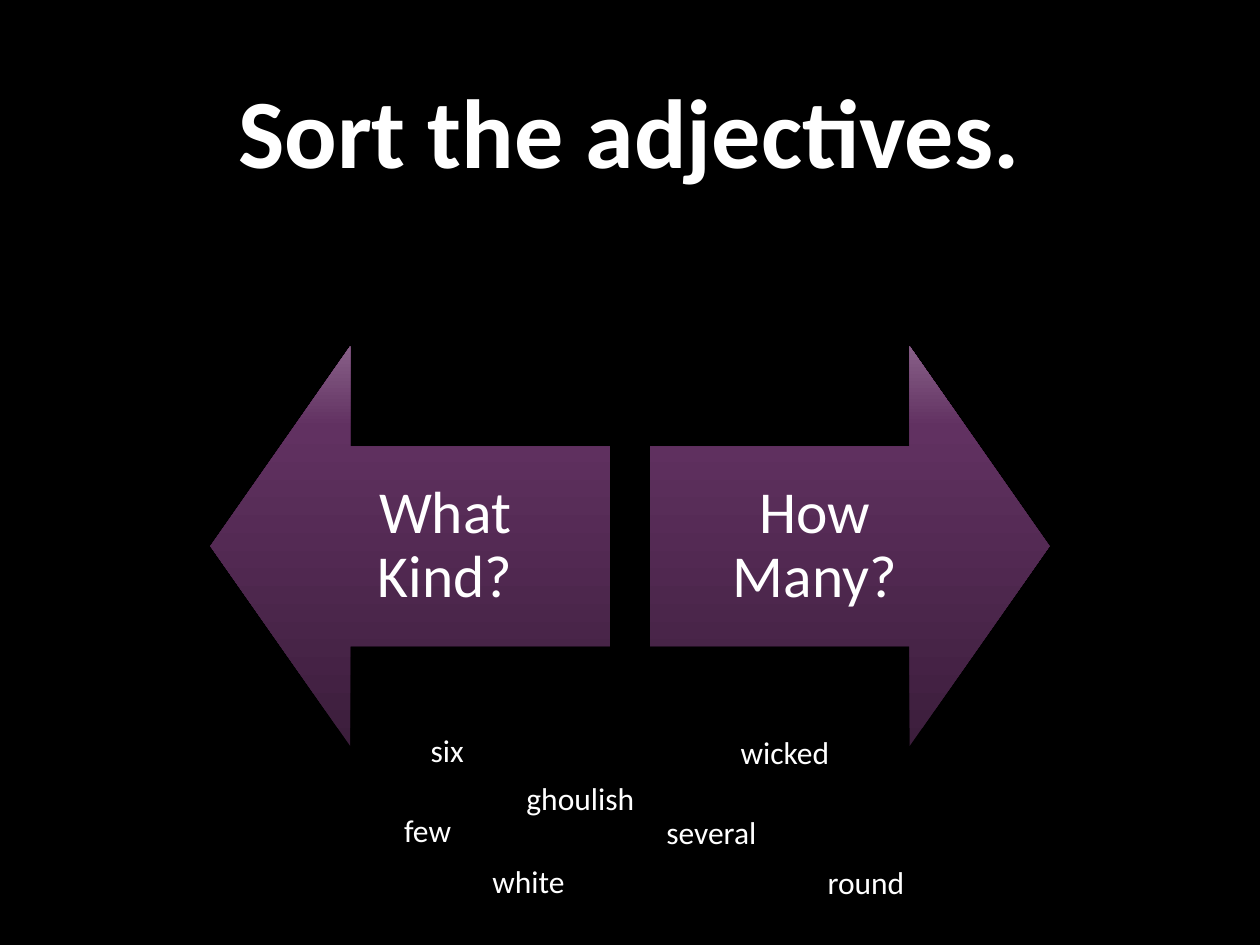
from dataclasses import dataclass

from pptx import Presentation
from pptx import util as u
from pptx.dml.color import RGBColor
from pptx.enum import shapes, text
from pptx.oxml import parse_xml
from pptx.oxml.ns import nsdecls


@dataclass(frozen=True)
class Theme:
    font: str = "Calibri"
    background: str = "000000"
    ink: str = "FFFFFF"
    # Arrow gradient from bottom to top: (percent, colour)
    gradient: tuple = ((0, "3C1E3C"), (80, "613161"), (100, "886088"))
    title_size: int = 56
    arrow_size: int = 34
    word_size: int = 18


THEME = Theme()
ARROW_SIZE = 3.17

ARROWS = [
    ("What Kind?", shapes.MSO_SHAPE.LEFT_ARROW, 1.67),
    ("How Many?", shapes.MSO_SHAPE.RIGHT_ARROW, 5.16),
]

# Word, left, top, width
WORDS = [
    ("white", 3.81, 6.79, 0.91),
    ("few", 3.11, 6.39, 0.7),
    ("ghoulish", 4.08, 6.13, 1.28),
    ("several", 5.19, 6.4, 1.06),
    ("round", 6.47, 6.8, 0.99),
    ("wicked", 5.78, 5.77, 1.38),
    ("six", 3.32, 5.75, 0.7),
]


def write(tf, content, size, align, bold=False):
    tf.word_wrap = True
    p = tf.paragraphs[0]
    p.text = content
    p.alignment = align
    p.font.name = THEME.font
    p.font.size = u.Pt(size)
    p.font.bold = bold
    p.font.color.rgb = RGBColor.from_string(THEME.ink)
    return p


def add_title(slide, content):
    box = slide.shapes.add_textbox(
        u.Inches(0.85), u.Inches(0.12), u.Inches(8.29), u.Inches(1.81))
    tf = box.text_frame
    tf.vertical_anchor = text.MSO_ANCHOR.MIDDLE
    write(tf, content, THEME.title_size, text.PP_ALIGN.CENTER, bold=True)


def fill_gradient(sp):
    stops = "".join(
        f'<a:gs pos="{percent * 1000}"><a:srgbClr val="{colour}"/></a:gs>'
        for percent, colour in THEME.gradient)
    sp.fill.background()
    no_fill = sp.element.spPr.find(
        "{http://schemas.openxmlformats.org/drawingml/2006/main}noFill")
    no_fill.getparent().replace(no_fill, parse_xml(
        f'<a:gradFill {nsdecls("a")} rotWithShape="1"><a:gsLst>{stops}</a:gsLst>'
        '<a:lin ang="16200000" scaled="0"/></a:gradFill>'))


def add_arrow(slide, label, kind, left):
    sp = slide.shapes.add_shape(
        kind, u.Inches(left), u.Inches(2.75),
        u.Inches(ARROW_SIZE), u.Inches(ARROW_SIZE))
    sp.adjustments[0] = 0.5
    sp.adjustments[1] = 0.35
    sp.shadow.inherit = False
    fill_gradient(sp)
    sp.line.fill.background()
    tf = sp.text_frame
    tf.margin_left = tf.margin_right = u.Inches(0.26)
    tf.margin_top = tf.margin_bottom = u.Inches(0.26)
    tf.vertical_anchor = text.MSO_ANCHOR.MIDDLE
    p = write(tf, label, THEME.arrow_size, text.PP_ALIGN.CENTER)
    p.line_spacing = 0.9


def add_word(slide, word, left, top, width):
    box = slide.shapes.add_textbox(
        u.Inches(left), u.Inches(top), u.Inches(width), u.Inches(0.4))
    write(box.text_frame, word, THEME.word_size, text.PP_ALIGN.LEFT)
    box.text_frame.auto_size = text.MSO_AUTO_SIZE.SHAPE_TO_FIT_TEXT


def main():
    prs = Presentation()
    prs.slide_width, prs.slide_height = u.Inches(10), u.Inches(7.5)
    slide = prs.slides.add_slide(prs.slide_layouts[6])
    slide.background.fill.solid()
    slide.background.fill.fore_color.rgb = RGBColor.from_string(THEME.background)

    # Heading
    add_title(slide, "Sort the adjectives.")

    # The two categories
    for arrow in ARROWS:
        add_arrow(slide, *arrow)

    # Words to sort
    for word in WORDS:
        add_word(slide, *word)

    prs.save("out.pptx")


if __name__ == "__main__":
    main()
